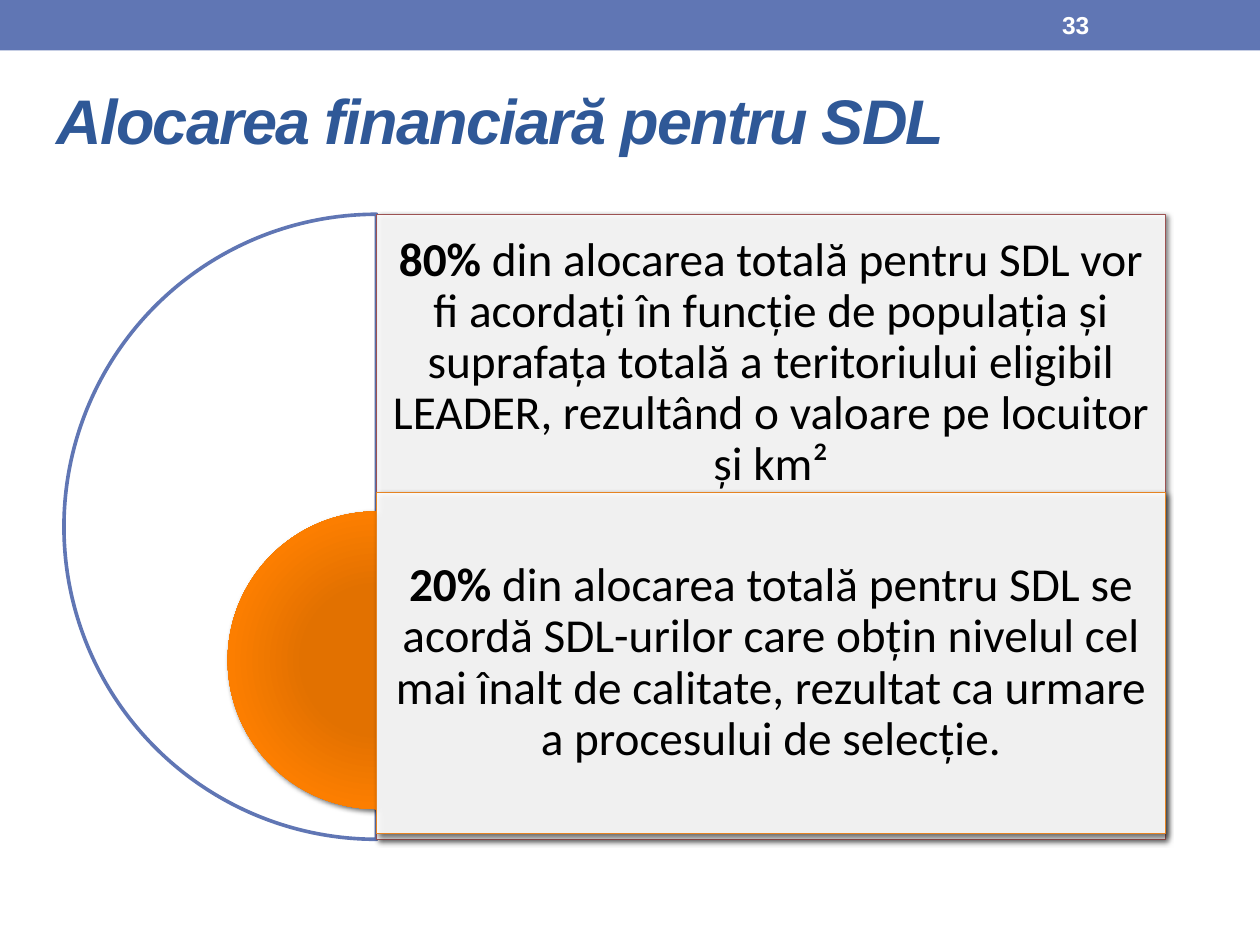
import pptx
import pptx.util
import pptx.dml.color
import pptx.enum.shapes
import pptx.enum.text
import pptx.oxml
import pptx.oxml.ns
from lxml import etree

Cm, Pt = pptx.util.Cm, pptx.util.Pt
SHAPE = pptx.enum.shapes.MSO_SHAPE
ANCHOR = pptx.enum.text.MSO_ANCHOR
CENTER = pptx.enum.text.PP_ALIGN.CENTER
qn = pptx.oxml.ns.qn

COLORS = {
    "bar": "6076B4", "title": "2F5897", "white": "FFFFFF", "black": "000000",
    "red": "9C5252", "edge": "E68422", "deep": "E27100", "bright": "FC7E00",
}
LEFT, WIDE = 7.59, 15.9  # both panels, in cm
PANELS = [  # panel top, panel height, text height, line colour, text
    (4.32, 12.6, 6, "red", "80% ",
     "din alocarea totală pentru SDL vor fi acordați în funcție de populația și "
     "suprafața totală a teritoriului eligibil LEADER, rezultând o valoare pe "
     "locuitor și km²"),
    (9.93, 6.88, 6.88, "edge", "20% ",
     "din alocarea totală pentru SDL se acordă SDL-urilor care obțin nivelul cel "
     "mai înalt de calitate, rezultat ca urmare a procesului de selecție."),
]


def rgb(name):
    return pptx.dml.color.RGBColor.from_string(COLORS[name])


def add_node(parent, tag, **attrs):
    node = etree.SubElement(parent, qn(tag))
    for key, value in attrs.items():
        node.set(key, str(value))
    return node


def add_form(slide, kind, box, fill=None, line=None, width=0.75):
    form = slide.shapes.add_shape(kind, *[Cm(v) for v in box])
    form.shadow.inherit = False
    if fill:
        form.fill.solid()
        form.fill.fore_color.rgb = rgb(fill)
    if line:
        form.line.color.rgb = rgb(line)
        form.line.width = Pt(width)
    else:
        form.line.fill.background()
    return form


def add_half(slide, top, size, mid, **style):
    """Left half of a disc whose flat side stands at mid."""
    half = add_form(slide, SHAPE.PIE, (mid - size / 2, top, size, size), **style)
    half.adjustments[0], half.adjustments[1] = 54, 162
    return half


def add_shade(form):
    effects = form._element.spPr.find(qn("a:effectLst"))
    shade = add_node(effects, "a:outerShdw", blurRad=Pt(3), dist=Pt(2),
                     dir=45 * 60000, rotWithShape=0)
    tint = add_node(shade, "a:srgbClr", val=COLORS["black"])
    add_node(tint, "a:alpha", val=60000)


def fill_round(form, stops):
    form.fill.gradient()
    grad = form._element.spPr.find(qn("a:gradFill"))
    for child in list(grad):
        grad.remove(child)
    chain = add_node(grad, "a:gsLst")
    for place, name in stops:
        stop = add_node(chain, "a:gs", pos=place * 1000)
        add_node(stop, "a:srgbClr", val=COLORS[name])
    ring = add_node(grad, "a:path", path="circle")
    add_node(ring, "a:fillToRect", l=100000, t=100000, r=100000, b=100000)


def add_run(para, text, size, font, color, bold):
    run = para.add_run()
    run.text = text
    run.font.size, run.font.name, run.font.bold = Pt(size), font, bold
    run.font.color.rgb = rgb(color)
    return run


def add_box(slide, box):
    frame = slide.shapes.add_textbox(*[Cm(v) for v in box]).text_frame
    frame.word_wrap = True
    frame.vertical_anchor = ANCHOR.MIDDLE
    return frame


def set_title(slide, text):
    title = slide.shapes.title
    title.left, title.top = Cm(0.89), Cm(1.52)
    title.width, title.height = Cm(24), Cm(3.18)
    frame = title.text_frame
    frame.vertical_anchor = ANCHOR.TOP
    para = frame.paragraphs[0]
    para.alignment = pptx.enum.text.PP_ALIGN.LEFT
    run = add_run(para, text, 36, "Arial", "title", True)
    run.font.italic = True
    run.font._element.set("spc", "-100")


def add_panel(slide, top, height, depth, line, lead, text):
    panel = add_form(slide, SHAPE.RECTANGLE, (LEFT, top, WIDE, height),
                     "white", line)
    tint = panel._element.spPr.find(qn("a:solidFill"))[0]
    add_node(tint, "a:alpha", val=90000)
    add_shade(panel)
    frame = add_box(slide, (LEFT, top, WIDE, depth))
    frame.margin_left = frame.margin_right = Cm(0.28)
    frame.margin_top = frame.margin_bottom = Cm(0.28)
    para = frame.paragraphs[0]
    para.alignment, para.line_spacing = CENTER, 0.9
    add_run(para, lead, 27, "Calibri", "black", True)
    add_run(para, text, 27, "Calibri", "black", False)


def main():
    deck = pptx.Presentation()
    deck.slide_width, deck.slide_height = Cm(25.4), Cm(19.05)
    slide = deck.slides.add_slide(deck.slide_layouts[5])

    # Top bar and title
    add_form(slide, SHAPE.RECTANGLE, (0, 0, 25.4, 1.02), "bar")
    set_title(slide, "Alocarea financiară pentru SDL")

    # Large half disc with the first panel
    add_half(slide, 4.32, 12.6, LEFT, fill="white", line="bar", width=2.08)
    add_panel(slide, *PANELS[0])

    # Small half disc with the second panel
    disc = add_half(slide, 10.31, 6, LEFT)
    fill_round(disc, [(0, "deep"), (34, "deep"), (70, "bright"), (100, "edge")])
    add_shade(disc)
    add_panel(slide, *PANELS[1])

    # Slide number
    frame = add_box(slide, (21.16, 0.05, 2.97, 0.91))
    add_run(frame.paragraphs[0], "33", 14, "Arial", "white", True)

    deck.save("out.pptx")


if __name__ == "__main__":
    main()
